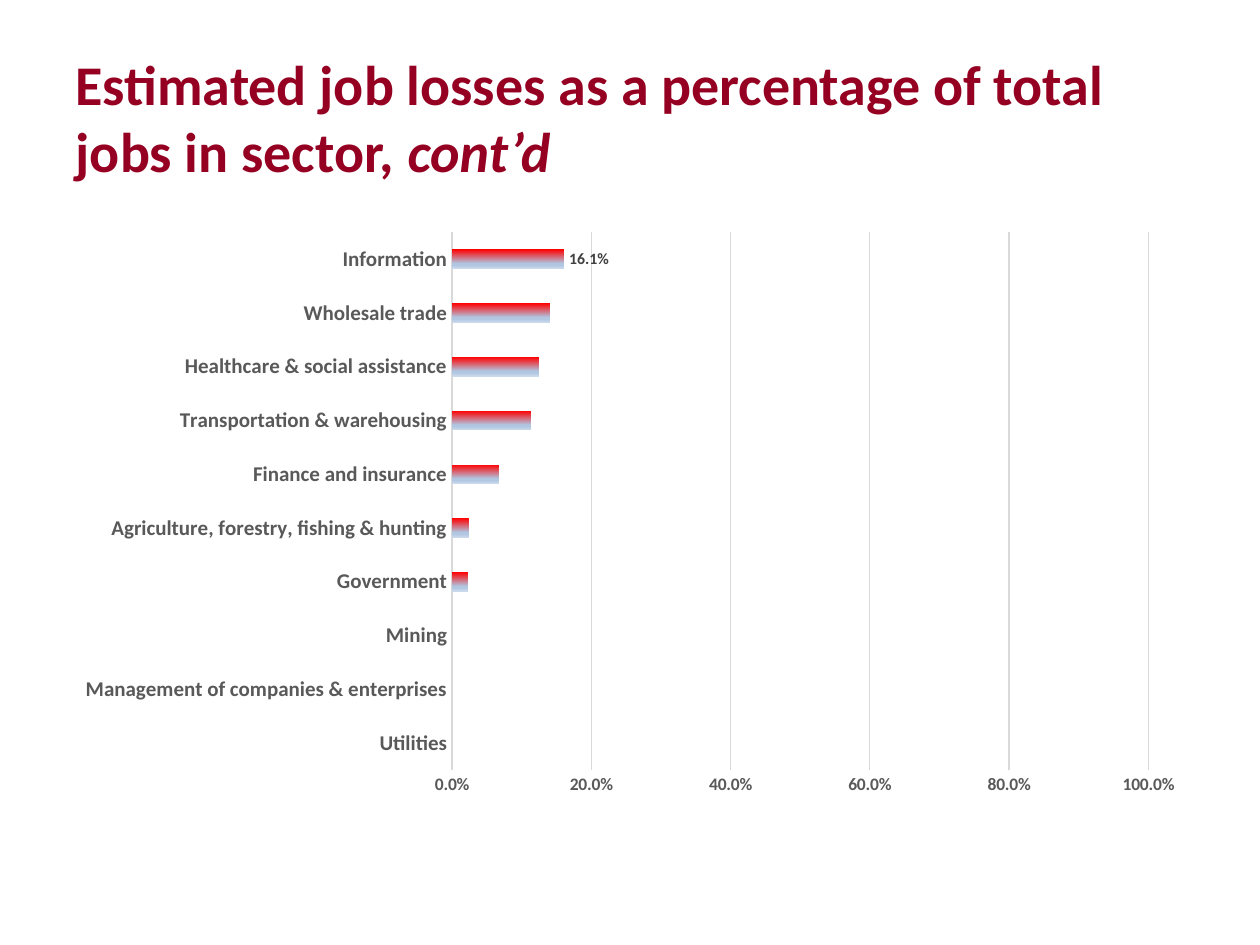
from lxml import etree
from pptx import Presentation
from pptx.chart.data import CategoryChartData
from pptx.dml.color import RGBColor
from pptx.enum.chart import XL_CHART_TYPE as ChartType, XL_LABEL_POSITION as LabelPos, XL_TICK_MARK as Tick
from pptx.enum.text import MSO_ANCHOR as Anchor, PP_ALIGN as Align
from pptx.oxml.ns import qn
from pptx.util import Inches, Pt

SECTORS = [
    ("Utilities", 0),
    ("Management of companies & enterprises", 0),
    ("Mining", 0),
    ("Government", 0.023),
    ("Agriculture, forestry, fishing & hunting", 0.024),
    ("Finance and insurance", 0.068),
    ("Transportation & warehousing", 0.113),
    ("Healthcare & social assistance", 0.125),
    ("Wholesale trade", 0.141),
    ("Information", 0.161),
]
BAR_STOPS = [(0, "FF0000"), (74, "B0C6E1"), (83, "B0C6E1"), (100, "CAD9EB")]


def rgb(value):
    return RGBColor.from_string(value)


def set_font(font, size, color, bold=True, italic=None):
    font.name, font.size, font.bold, font.italic = "Calibri", Pt(size), bold, italic
    font.color.rgb = rgb(color)


def gradient_down(fmt, stops):
    """Fill a chart element from top to bottom with any number of stops."""
    fmt.fill.gradient()
    fmt.fill.gradient_angle = 270
    gs_list = fmt.fill._xPr.find(qn("a:gradFill")).find(qn("a:gsLst"))
    for gs in list(gs_list):
        gs_list.remove(gs)
    for share, color in stops:
        gs = etree.SubElement(gs_list, qn("a:gs"), pos=str(share * 1000))
        etree.SubElement(gs, qn("a:srgbClr"), val=color)


class SlideBuilder:
    TITLE, TEXT, LABEL, GRID = "950022", "595959", "404040", "D9D9D9"

    def __init__(self, prs):
        self.width, self.height = prs.slide_width, prs.slide_height
        self.slide = prs.slides.add_slide(prs.slide_layouts[5])

    def box(self, x, y, w, h):
        """Turn shares of the slide's size into lengths."""
        return [round(share * side) for share, side in
                zip((x, y, w, h), (self.width, self.height) * 2)]

    def title(self, box, runs):
        sp = self.slide.shapes.title
        sp.left, sp.top, sp.width, sp.height = self.box(*box)
        tf = sp.text_frame
        tf.word_wrap, tf.vertical_anchor = True, Anchor.MIDDLE
        p = tf.paragraphs[0]
        p.alignment = Align.LEFT
        for text, italic in runs:
            r = p.add_run()
            r.text = text
            set_font(r.font, 32, self.TITLE, italic=italic)

    def axis(self, axis, size):
        axis.major_tick_mark = axis.minor_tick_mark = Tick.NONE
        set_font(axis.tick_labels.font, size, self.TEXT)

    def grid_line(self, line):
        line.color.rgb = rgb(self.GRID)
        line.width = Pt(0.75)

    def bar_chart(self, box, rows, labelled):
        data = CategoryChartData(number_format="0.0%")
        data.categories = [name for name, _ in rows]
        data.add_series("Series 1", [value for _, value in rows])
        chart = self.slide.shapes.add_chart(
            ChartType.BAR_CLUSTERED, *self.box(*box), data).chart
        chart.has_legend = chart.has_title = False
        set_font(chart.font, 10, "000000", bold=False)

        self.axis(chart.category_axis, 12)
        self.grid_line(chart.category_axis.format.line)
        values = chart.value_axis
        self.axis(values, 10)
        values.format.line.fill.background()
        values.minimum_scale, values.maximum_scale, values.major_unit = 0, 1, 0.2
        values.tick_labels.number_format = "0.0%"
        values.tick_labels.number_format_is_linked = False
        values.has_major_gridlines = True
        self.grid_line(values.major_gridlines.format.line)

        plot = chart.plots[0]
        plot.gap_width, plot.vary_by_categories = 182, False
        series = plot.series[0]
        series.invert_if_negative = False
        gradient_down(series.format, BAR_STOPS)
        label = series.points[labelled].data_label
        label.position = LabelPos.OUTSIDE_END
        set_font(label.font, 9, self.LABEL)


def main():
    prs = Presentation()
    prs.slide_width, prs.slide_height = Inches(10), Inches(7.5)
    page = SlideBuilder(prs)
    page.title((0.05, 0.04, 0.9, 1 / 6), [
        ("Estimated job losses as a percentage of total jobs in sector, ", None),
        ("cont’d", True),
    ])
    page.bar_chart((0.05, 7 / 30, 0.9, 0.62), SECTORS, labelled=len(SECTORS) - 1)
    prs.save("out.pptx")


if __name__ == "__main__":
    main()
